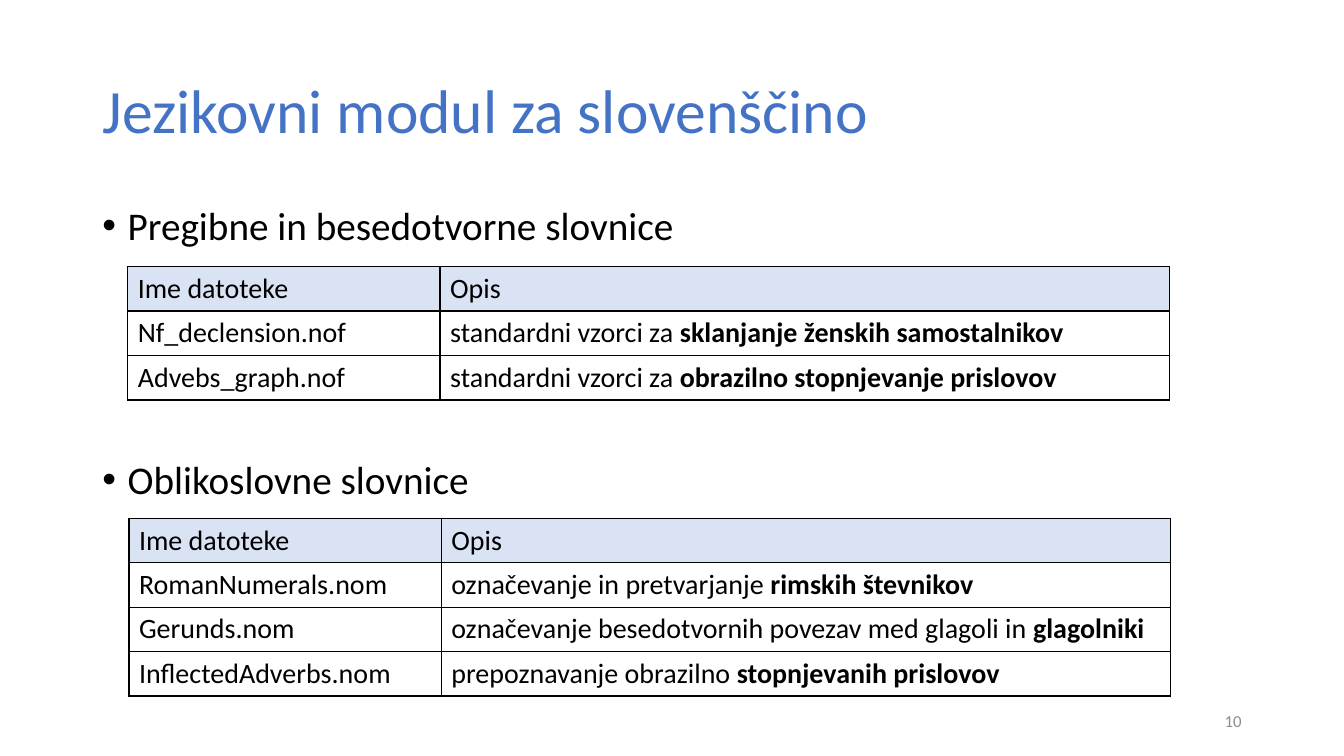
from dataclasses import dataclass

from lxml import etree
from pptx import Presentation
from pptx.dml.color import RGBColor
from pptx.enum.text import MSO_ANCHOR, MSO_AUTO_SIZE, PP_ALIGN
from pptx.oxml.ns import qn
from pptx.slide import Slide
from pptx.text.text import TextFrame, _Paragraph
from pptx.util import Cm, Length, Pt

LEFT, RIGHT = PP_ALIGN.LEFT, PP_ALIGN.RIGHT
TOP, MIDDLE = MSO_ANCHOR.TOP, MSO_ANCHOR.MIDDLE
NO_AUTOFIT = MSO_AUTO_SIZE.NONE
TITLE_ONLY = 5


@dataclass(frozen=True)
class Theme:
    font: str = "Calibri"
    title_size: Length = Pt(44)
    heading_size: Length = Pt(28)
    table_size: Length = Pt(20)
    number_size: Length = Pt(12)
    accent: RGBColor = RGBColor(0x44, 0x72, 0xC4)
    ink: RGBColor = RGBColor(0, 0, 0)
    grey: RGBColor = RGBColor(0x8C, 0x8C, 0x8C)
    header_fill: RGBColor = RGBColor(0xDA, 0xE3, 0xF3)
    cell_fill: RGBColor = RGBColor(0xFF, 0xFF, 0xFF)


@dataclass(frozen=True)
class Box:
    left: Length
    top: Length
    width: Length
    height: Length


@dataclass(frozen=True)
class Grammar:
    """One file of a grammar: its name and its description with a bold ending."""
    file_name: str
    description: str
    emphasis: str


@dataclass(frozen=True)
class GrammarSection:
    heading: str
    space_before: Length
    table_left: Length
    table_top: Length
    grammars: tuple[Grammar, ...]


THEME = Theme()
TITLE_BOX = Box(Cm(2.33), Cm(1.01), Cm(29.21), Cm(3.68))
BODY_BOX = Box(Cm(2.33), Cm(5.07), Cm(29.21), Cm(12.09))
NUMBER_BOX = Box(Cm(23.92), Cm(17.65), Cm(7.62), Cm(1.01))
COLUMN_WIDTHS = (Cm(7.87), Cm(18.38))
ROW_HEIGHT = Cm(1.1)
BULLET_INDENT = Cm(0.64)
BORDER_WIDTH = Pt(1)
HEADER = ("Ime datoteke", "Opis")

SECTIONS = (
    GrammarSection("Pregibne in besedotvorne slovnice", Pt(0), Cm(3.22), Cm(6.72), (
        Grammar("Nf_declension.nof", "standardni vzorci za ",
                "sklanjanje ženskih samostalnikov"),
        Grammar("Advebs_graph.nof", "standardni vzorci za ",
                "obrazilno stopnjevanje prislovov"),
    )),
    GrammarSection("Oblikoslovne slovnice", Pt(151.5), Cm(3.25), Cm(13.06), (
        Grammar("RomanNumerals.nom", "označevanje in pretvarjanje ",
                "rimskih števnikov"),
        Grammar("Gerunds.nom", "označevanje besedotvornih povezav med glagoli in ",
                "glagolniki"),
        Grammar("InflectedAdverbs.nom", "prepoznavanje obrazilno ",
                "stopnjevanih prislovov"),
    )),
)


def add_run(paragraph: _Paragraph, text: str, size: Length,
            color: RGBColor, bold: bool = False) -> None:
    run = paragraph.add_run()
    run.text = text
    run.font.name = THEME.font
    run.font.size = size
    run.font.bold = bold
    run.font.color.rgb = color


def place(shape, box: Box, anchor: MSO_ANCHOR) -> TextFrame:
    shape.left, shape.top = box.left, box.top
    shape.width, shape.height = box.width, box.height
    frame = shape.text_frame
    frame.word_wrap = True
    frame.auto_size = NO_AUTOFIT
    frame.vertical_anchor = anchor
    return frame


def add_text_box(slide: Slide, box: Box, anchor: MSO_ANCHOR) -> TextFrame:
    shape = slide.shapes.add_textbox(box.left, box.top, box.width, box.height)
    return place(shape, box, anchor)


def add_bullet(paragraph: _Paragraph) -> None:
    properties = paragraph._p.get_or_add_pPr()
    properties.set("marL", str(BULLET_INDENT))
    properties.set("indent", str(-BULLET_INDENT))
    etree.SubElement(properties, qn("a:buFont"), typeface="Arial")
    etree.SubElement(properties, qn("a:buChar"), char="•")


def add_borders(cell) -> None:
    properties = cell._tc.get_or_add_tcPr()
    for side in ("a:lnL", "a:lnR", "a:lnT", "a:lnB"):
        line = etree.SubElement(properties, qn(side), w=str(BORDER_WIDTH))
        fill = etree.SubElement(line, qn("a:solidFill"))
        etree.SubElement(fill, qn("a:srgbClr"), val=str(THEME.ink))


def fill_cell(cell, color: RGBColor, text: str, emphasis: str = "") -> None:
    add_borders(cell)
    cell.fill.solid()
    cell.fill.fore_color.rgb = color
    paragraph = cell.text_frame.paragraphs[0]
    add_run(paragraph, text, THEME.table_size, THEME.ink)
    if emphasis:
        add_run(paragraph, emphasis, THEME.table_size, THEME.ink, bold=True)


def add_grammar_table(slide: Slide, section: GrammarSection) -> None:
    row_count = len(section.grammars) + 1
    table = slide.shapes.add_table(
        row_count, len(COLUMN_WIDTHS), section.table_left, section.table_top,
        sum(COLUMN_WIDTHS), ROW_HEIGHT * row_count).table
    table.horz_banding = False
    table.first_row = False
    for column, width in zip(table.columns, COLUMN_WIDTHS):
        column.width = width
    for row in table.rows:
        row.height = ROW_HEIGHT

    for index, label in enumerate(HEADER):
        fill_cell(table.cell(0, index), THEME.header_fill, label)
    for index, grammar in enumerate(section.grammars, start=1):
        fill_cell(table.cell(index, 0), THEME.cell_fill, grammar.file_name)
        fill_cell(table.cell(index, 1), THEME.cell_fill,
                  grammar.description, grammar.emphasis)


def add_headings(slide: Slide) -> None:
    frame = add_text_box(slide, BODY_BOX, TOP)
    for index, section in enumerate(SECTIONS):
        paragraph = frame.add_paragraph() if index else frame.paragraphs[0]
        add_bullet(paragraph)
        paragraph.line_spacing = 0.9
        paragraph.space_before = section.space_before
        add_run(paragraph, section.heading, THEME.heading_size, THEME.ink)


def main() -> None:
    presentation = Presentation()
    presentation.slide_width, presentation.slide_height = Cm(33.87), Cm(19.05)
    slide = presentation.slides.add_slide(presentation.slide_layouts[TITLE_ONLY])

    # Title
    title = place(slide.shapes.title, TITLE_BOX, MIDDLE).paragraphs[0]
    title.alignment = LEFT
    title.line_spacing = 0.9
    add_run(title, "Jezikovni modul za slovenščino", THEME.title_size, THEME.accent)

    # Headings and their tables
    add_headings(slide)
    for section in SECTIONS:
        add_grammar_table(slide, section)

    # Slide number
    number = add_text_box(slide, NUMBER_BOX, MIDDLE).paragraphs[0]
    number.alignment = RIGHT
    add_run(number, "10", THEME.number_size, THEME.grey)

    presentation.save("out.pptx")


if __name__ == "__main__":
    main()
